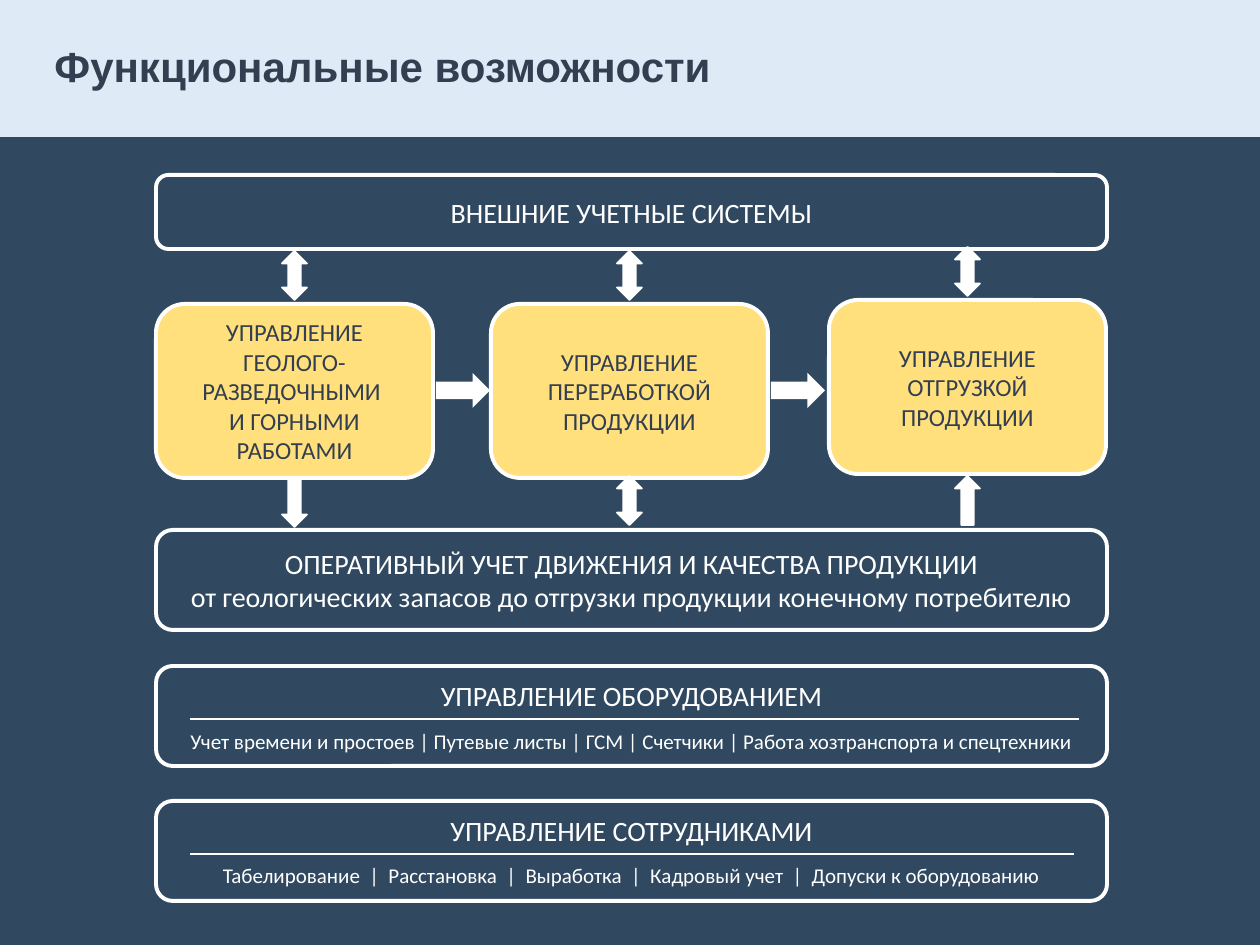
"""Builds the slide on the functional modules of a mining management system."""
import pptx
import pptx.dml.color
import pptx.enum.shapes
import pptx.enum.text
import pptx.oxml.ns
import pptx.util
import lxml.etree

PX = 914400 / 126
COLORS = {"navy": "304961", "sky": "DEEBF7", "slate": "333F50",
          "yellow": "FFE07D", "white": "FFFFFF"}
PRESETS = pptx.enum.shapes.MSO_SHAPE


def emu(px):
    return pptx.util.Emu(round(px * PX))


def rgb(name):
    return pptx.dml.color.RGBColor.from_string(COLORS[name])


class Board:
    """Holds the style and the current slide."""

    middle = pptx.enum.text.MSO_ANCHOR.MIDDLE
    center = pptx.enum.text.PP_ALIGN.CENTER

    def __init__(self, slide):
        self.slide = slide
        slide.background.fill.solid()
        slide.background.fill.fore_color.rgb = rgb("navy")

    def paint(self, shape, fill, width):
        shape.shadow.inherit = False
        if fill:
            shape.fill.solid()
            shape.fill.fore_color.rgb = rgb(fill)
        else:
            shape.fill.background()
        if width:
            shape.line.color.rgb = rgb("white")
            shape.line.width = pptx.util.Pt(width)
        else:
            shape.line.fill.background()

    def shape(self, preset, box, fill=None, width=0):
        shape = self.slide.shapes.add_shape(preset, *map(emu, box))
        self.paint(shape, fill, width)
        return shape

    def label(self, shape, texts, sizes, color, gap=0, **formats):
        frame = shape.text_frame
        frame.word_wrap = True
        frame.vertical_anchor = self.middle
        frame.text = "\n".join(texts)
        for paragraph, size in zip(frame.paragraphs, sizes):
            font = {"name": "Calibri", "size": pptx.util.Pt(size), **formats}
            for key, value in font.items():
                setattr(paragraph.font, key, value)
            paragraph.font.color.rgb = rgb(color)
        if gap:
            frame.paragraphs[0].space_after = pptx.util.Pt(gap)
        return frame

    def title(self, box, text):
        title = self.slide.shapes.add_textbox(*map(emu, box))
        frame = self.label(title, [text], [24], "slate", name="Arial", bold=True)
        frame.paragraphs[0].line_spacing = 0.9

    def panel(self, box, texts, sizes, fill=None, color="white", gap=0):
        panel = self.shape(PRESETS.ROUNDED_RECTANGLE, box, fill, 2.25)
        frame = self.label(panel, texts, sizes, color, gap)
        for paragraph in frame.paragraphs:
            paragraph.alignment = self.center

    def rule(self, left, right, y):
        rule = self.slide.shapes.add_connector(
            pptx.enum.shapes.MSO_CONNECTOR.STRAIGHT,
            emu(left), emu(y), emu(right), emu(y))
        rule.line.color.rgb = rgb("white")
        rule.line.width = pptx.util.Pt(1.5)
        lxml.etree.SubElement(rule._element.spPr, pptx.oxml.ns.qn("a:effectLst"))


def main():
    deck = pptx.Presentation()
    deck.slide_width, deck.slide_height = emu(1260), emu(945)
    board = Board(deck.slides.add_slide(deck.slide_layouts[6]))

    board.shape(PRESETS.RECTANGLE, (0, 0, 1260, 137), "sky")
    board.title((42, 20, 764, 98), "Функциональные возможности")

    left, width = 156, 951
    board.panel((left, 175, width, 74), ["ВНЕШНИЕ УЧЕТНЫЕ СИСТЕМЫ"], [16])

    both = PRESETS.UP_DOWN_ARROW
    stages = [
        (left, 304, "УПРАВЛЕНИЕ ГЕОЛОГО-РАЗВЕДОЧНЫМИ \vИ ГОРНЫМИ РАБОТАМИ",
         PRESETS.DOWN_ARROW, 478),
        (491, 304, "УПРАВЛЕНИЕ ПЕРЕРАБОТКОЙ ПРОДУКЦИИ", both, 476),
        (829, 300, "УПРАВЛЕНИЕ ОТГРУЗКОЙ ПРОДУКЦИИ", PRESETS.UP_ARROW, 476),
    ]
    for x, y, name, lower_arrow, lower_top in stages:
        board.panel((x, y, 277, 174), [name], [14], "yellow", "slate")
        for preset, top in ((both, y - 53), (lower_arrow, lower_top)):
            board.shape(preset, (x + 126, top, 25, 49), "white", 1)
    for x, *_ in stages[:-1]:
        board.shape(PRESETS.RIGHT_ARROW, (x + 280, 373, 54, 35), "white")

    board.panel((left, 530, width, 100), [
        "ОПЕРАТИВНЫЙ УЧЕТ ДВИЖЕНИЯ И КАЧЕСТВА ПРОДУКЦИИ",
        "от геологических запасов до отгрузки продукции конечному потребителю",
    ], [16, 16])

    resources = [
        (666, 1079, "УПРАВЛЕНИЕ ОБОРУДОВАНИЕМ",
         "Учет времени и простоев | Путевые листы | ГСМ | Счетчики | "
         "Работа хозтранспорта и спецтехники"),
        (801, 1074, "УПРАВЛЕНИЕ СОТРУДНИКАМИ",
         "Табелирование  |  Расстановка  |  Выработка  |  Кадровый учет  |  "
         "Допуски к оборудованию"),
    ]
    for y, rule_end, heading, functions in resources:
        board.panel((left, y, width, 100), [heading, functions], [16, 12], gap=9)
        board.rule(190, rule_end, y + 53)

    deck.save("out.pptx")


if __name__ == "__main__":
    main()
